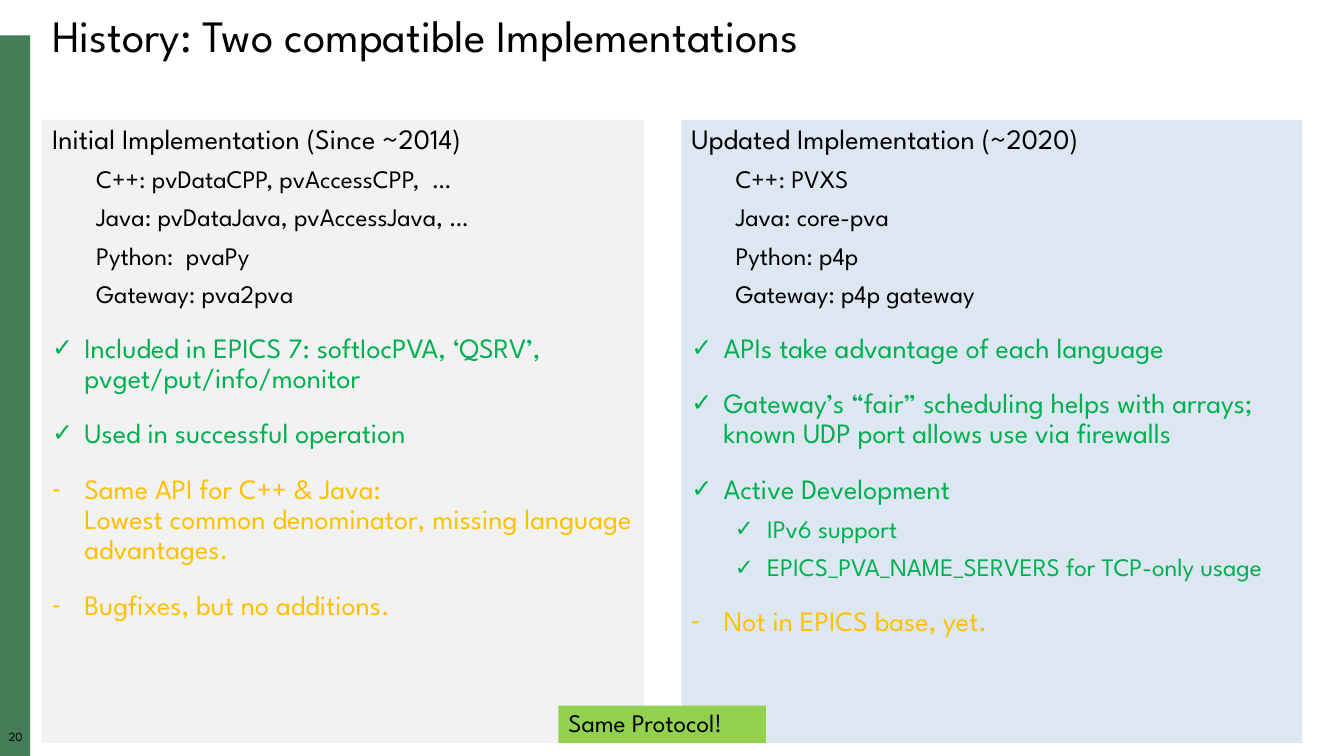
from lxml import etree
from pptx import Presentation
from pptx import util as u
from pptx.dml import color as col
from pptx.enum import shapes, text
from pptx.oxml import ns

FONT = "League Spartan"
BLACK, GREEN, AMBER = "000000", "00B050", "FFC000"
CHECK, DASH = "✓", "-"

HEAD = dict(size=20, gap=18)
ITEM = dict(size=18, gap=8, level=1, left=31.5)
PRO = dict(size=20, gap=18, left=23, hang=23, mark=CHECK, color=GREEN)
CON = dict(PRO, mark=DASH, color=AMBER)
SUB = dict(PRO, size=18, gap=8, level=1, left=54)

FIRST = [
    ("Initial Implementation (Since ~2014)", HEAD),
    ("C++: pvDataCPP, pvAccessCPP,  …", ITEM),
    ("Java: pvDataJava, pvAccessJava, …", ITEM),
    ("Python:  pvaPy", ITEM),
    ("Gateway: pva2pva", ITEM),
    ("Included in EPICS 7: softIocPVA, ‘QSRV’, pvget/put/info/monitor", PRO),
    ("Used in successful operation", PRO),
    ("Same API for C++ & Java:\nLowest common denominator, missing language advantages.", CON),
    ("Bugfixes, but no additions.", CON),
]
SECOND = [
    ("Updated Implementation (~2020)", HEAD),
    ("C++: PVXS", ITEM),
    ("Java: core-pva", ITEM),
    ("Python: p4p", ITEM),
    ("Gateway: p4p gateway", ITEM),
    ("APIs take advantage of each language", PRO),
    ("Gateway’s “fair” scheduling helps with arrays; known UDP port allows use via firewalls", PRO),
    ("Active Development", PRO),
    ("IPv6 support", SUB),
    ("EPICS_PVA_NAME_SERVERS for TCP-only usage", SUB),
    ("Not in EPICS base, yet.", CON),
]


def rgb(code):
    return col.RGBColor.from_string(code)


def place(shape, left, top, width, height):
    shape.left, shape.top = u.Pt(left), u.Pt(top)
    shape.width, shape.height = u.Pt(width), u.Pt(height)


def paint(shape, code):
    shape.fill.solid()
    shape.fill.fore_color.rgb = rgb(code)


def bullet(para, mark, color):
    props = para._p.get_or_add_pPr()
    if not mark:
        etree.SubElement(props, ns.qn("a:buNone"))
        return
    tint = etree.SubElement(props, ns.qn("a:buClr"))
    etree.SubElement(tint, ns.qn("a:srgbClr"), val=color)
    etree.SubElement(props, ns.qn("a:buSzPct"), val="90000")
    etree.SubElement(props, ns.qn("a:buChar"), char=mark)


def write(para, words, size, gap=0, level=0, left=0, hang=0, mark=None,
          color=BLACK, align=text.PP_ALIGN.LEFT):
    para.level = level
    para.alignment = align
    para.line_spacing = 0.9
    para.space_before = u.Pt(gap)
    para.space_after = u.Pt(0)
    props = para._p.get_or_add_pPr()
    props.set("marL", str(u.Pt(left)))
    props.set("indent", str(-u.Pt(hang)))
    bullet(para, mark, color)
    for num, line in enumerate(words.split("\n")):
        if num:
            para.add_line_break()
        run = para.add_run()
        run.text = line
        run.font.name = FONT
        run.font.size = u.Pt(size)
        run.font.color.rgb = rgb(color)


def frame(shape, anchor):
    box = shape.text_frame
    box.word_wrap = True
    box.auto_size = text.MSO_AUTO_SIZE.NONE
    box.vertical_anchor = anchor
    return box


def panel(holder, area, fill, rows):
    place(holder, *area)
    paint(holder, fill)
    box = frame(holder, text.MSO_ANCHOR.TOP)
    for num, (words, style) in enumerate(rows):
        para = box.add_paragraph() if num else box.paragraphs[0]
        write(para, words, **(style if num else dict(style, gap=0)))


def block(slide, area, fill):
    shape = slide.shapes.add_shape(shapes.MSO_SHAPE.RECTANGLE, *map(u.Pt, area))
    shape.shadow.inherit = False
    shape.line.fill.background()
    paint(shape, fill)
    return shape


def number(slide, words):
    label = slide.shapes.add_textbox(*map(u.Pt, (0, 522, 22.3, 12.2)))
    box = frame(label, text.MSO_ANCHOR.TOP)
    box.margin_left = box.margin_right = box.margin_top = box.margin_bottom = 0
    write(box.paragraphs[0], words, 9, align=text.PP_ALIGN.CENTER)


def main():
    deck = Presentation()
    deck.slide_width, deck.slide_height = u.Pt(960), u.Pt(540)
    slide = deck.slides.add_slide(deck.slide_layouts[3])
    title, first, second = slide.placeholders

    block(slide, (0, 25.2, 21.6, 514.8), "447E59")
    number(slide, "20")

    place(title, 30, 6, 900, 42.5)
    box = frame(title, text.MSO_ANCHOR.MIDDLE)
    write(box.paragraphs[0], "History: Two compatible Implementations", 32)

    panel(first, (30, 85.7, 430, 445), "F2F2F2", FIRST)
    panel(second, (486.7, 85.7, 443.5, 445), "DDE7F1", SECOND)

    badge = block(slide, (398.9, 504, 148.3, 26.7), "92D050")
    box = frame(badge, text.MSO_ANCHOR.MIDDLE)
    write(box.paragraphs[0], "Same Protocol!", 18)

    deck.save("out.pptx")


if __name__ == "__main__":
    main()
